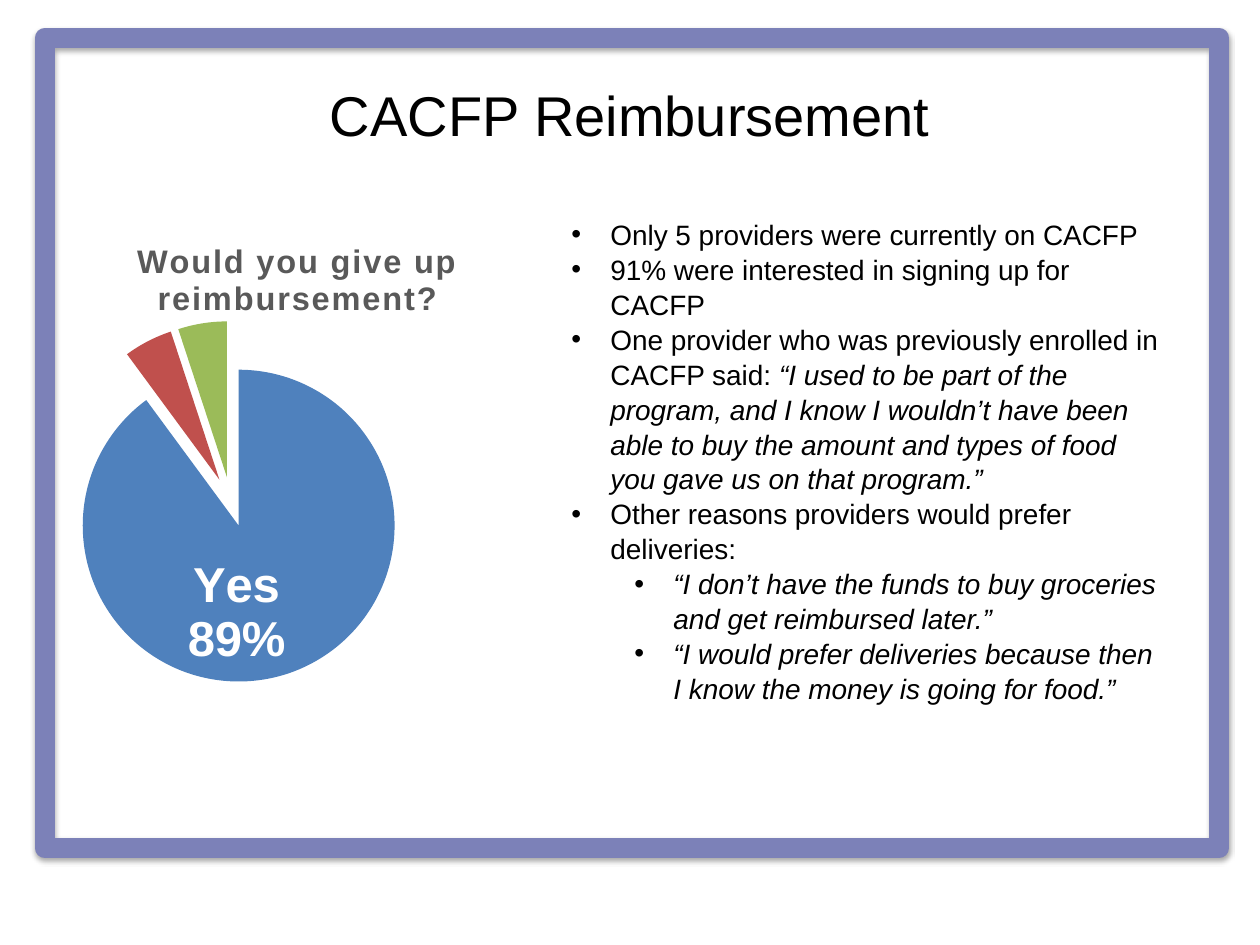
"""Build the CACFP reimbursement slide with a pie chart and bullet list."""
from lxml import etree
from pptx import Presentation
from pptx import util as u
from pptx.chart.data import CategoryChartData
from pptx.dml.color import RGBColor
from pptx.enum import chart as charts, shapes, text
from pptx.oxml import parse_xml
from pptx.oxml.ns import nsdecls, qn

PX = 914400 // 126
FONT = "Arial"
COLORS = {"frame": "7C81B8", "ink": "000000", "heading": "595959", "label": "FFFFFF",
          "yes": "4F81BD", "no": "C0504D", "maybe": "9BBB59"}
QUESTION = "Would you give up reimbursement?"
ANSWERS = {"Yes": 89, "No": 5, "Maybe": 5}
BULLETS = [
    (0, [("Only 5 providers were currently on CACFP", False)]),
    (0, [("91% were interested in signing up for CACFP", False)]),
    (0, [("One provider who was previously enrolled in CACFP said: ", False),
         ("“I used to be part of the program, and I know I wouldn’t have been able to buy "
          "the amount and types of food you gave us on that program.”", True)]),
    (0, [("Other reasons providers would prefer deliveries:", False)]),
    (1, [("“I don’t have the funds to buy groceries and get reimbursed later.”", True)]),
    (1, [("“I would prefer deliveries because then I know the money is going for food.”", True)]),
]


def px(*lengths):
    """Turn pixel lengths into EMU."""
    return [u.Emu(length * PX) for length in lengths]


def manual_layout(x, y, width=None, height=None):
    """Return a chart layout placed by fractions of the chart area."""
    target = '<c:layoutTarget val="inner"/>' if width else ""
    size = f'<c:w val="{width}"/><c:h val="{height}"/>' if width else ""
    return parse_xml(
        f'<c:layout {nsdecls("c")}><c:manualLayout>{target}<c:xMode val="edge"/>'
        f'<c:yMode val="edge"/><c:x val="{x}"/><c:y val="{y}"/>{size}'
        '</c:manualLayout></c:layout>')


def set_layout(parent, layout, before):
    """Replace the layout of a chart part, keeping schema order."""
    for old in parent.findall(qn("c:layout")):
        parent.remove(old)
    parent.find(qn(before)).addprevious(layout)


class SlideBuilder:
    """Hold the text style and the current slide."""

    def __init__(self, presentation):
        self.slide = presentation.slides.add_slide(presentation.slide_layouts[5])

    def run(self, paragraph, words, size, color="ink", bold=False, italic=False):
        """Add one styled run."""
        run = paragraph.add_run()
        run.text = words
        font = run.font
        font.name, font.size, font.bold, font.italic = FONT, u.Pt(size), bold, italic
        font.color.rgb = RGBColor.from_string(COLORS[color])
        return run

    def frame(self, *box):
        """Draw the shadowed border behind everything else."""
        shape = self.slide.shapes.add_shape(shapes.MSO_SHAPE.RECTANGLE, *px(*box))
        shape.fill.background()
        shape.line.color.rgb = RGBColor.from_string(COLORS["frame"])
        shape.line.width = u.Pt(11.75)
        shape.shadow.inherit = False
        effects = shape._element.spPr.find(qn("a:effectLst"))
        effects.append(parse_xml(
            f'<a:outerShdw {nsdecls("a")} blurRad="{u.Pt(3.1)}" dist="{u.Pt(1.8)}" '
            'dir="5400000" rotWithShape="0"><a:srgbClr val="000000">'
            '<a:alpha val="35000"/></a:srgbClr></a:outerShdw>'))
        self.slide.shapes._spTree.insert(2, shape._element)

    def title(self, words, *box):
        """Place and fill the title placeholder."""
        title = self.slide.shapes.title
        title.left, title.top, title.width, title.height = px(*box)
        title.text_frame.vertical_anchor = text.MSO_ANCHOR.MIDDLE
        paragraph = title.text_frame.paragraphs[0]
        paragraph.alignment = text.PP_ALIGN.CENTER
        self.run(paragraph, words, 32)

    def bullets(self, items, *box):
        """Add a bulleted list with two levels."""
        text_frame = self.slide.shapes.add_textbox(*px(*box)).text_frame
        text_frame.word_wrap = True
        for index, (level, runs) in enumerate(items):
            paragraph = text_frame.paragraphs[0] if index == 0 else text_frame.add_paragraph()
            paragraph.level = level
            paragraph.line_spacing = 1.04
            properties = paragraph._p.get_or_add_pPr()
            properties.set("marL", str(u.Inches(0.31 + 0.5 * level)))
            properties.set("indent", str(-u.Inches(0.31)))
            etree.SubElement(properties, qn("a:buFont"), typeface=FONT)
            etree.SubElement(properties, qn("a:buChar"), char="•")
            for words, italic in runs:
                self.run(paragraph, words, 16, italic=italic)

    def pie(self, question, answers, *box):
        """Add an exploded pie chart that labels its largest slice."""
        data = CategoryChartData()
        data.categories = list(answers)
        data.add_series(question, list(answers.values()))
        chart = self.slide.shapes.add_chart(
            charts.XL_CHART_TYPE.PIE, *px(*box), data).chart
        chart.has_legend = False
        chart.font.name, chart.font.size = "Times New Roman", u.Pt(10)
        chart.font.color.rgb = RGBColor.from_string(COLORS["ink"])

        heading = chart.chart_title
        run = self.run(heading.text_frame.paragraphs[0], question, 18.6, "heading", bold=True)
        run._r.get_or_add_rPr().set("spc", "100")
        set_layout(heading._element, manual_layout(0.22, 0.1), "c:overlay")
        set_layout(chart._chartSpace.chart.plotArea,
                   manual_layout(0.084, 0.259, 0.607, 0.659), "c:pieChart")

        plot = chart.plots[0]
        plot.vary_by_categories = True
        series = plot.series[0]
        for index, answer in enumerate(answers):
            fill = series.points[index].format.fill
            fill.solid()
            fill.fore_color.rgb = RGBColor.from_string(COLORS[answer.lower()])
        series._element.find(qn("c:dPt")).addprevious(
            parse_xml(f'<c:explosion {nsdecls("c")} val="16"/>'))

        label = series.points[0].data_label
        text_frame = label.text_frame
        self.run(text_frame.paragraphs[0], "Yes", 28, "label", bold=True)
        self.run(text_frame.add_paragraph(), "89%", 28, "label", bold=True)
        label.position = charts.XL_LABEL_POSITION.INSIDE_END


def main():
    """Build and save the slide."""
    presentation = Presentation()
    presentation.slide_width, presentation.slide_height = px(1260, 945)
    builder = SlideBuilder(presentation)
    builder.frame(45, 38, 1174, 810)
    builder.title("CACFP Reimbursement", 63, 49, 1134, 131)
    builder.bullets(BULLETS, 559, 210, 622, 488)
    builder.pie(QUESTION, ANSWERS, 0, 179, 596, 549)
    presentation.save("out.pptx")


if __name__ == "__main__":
    main()
